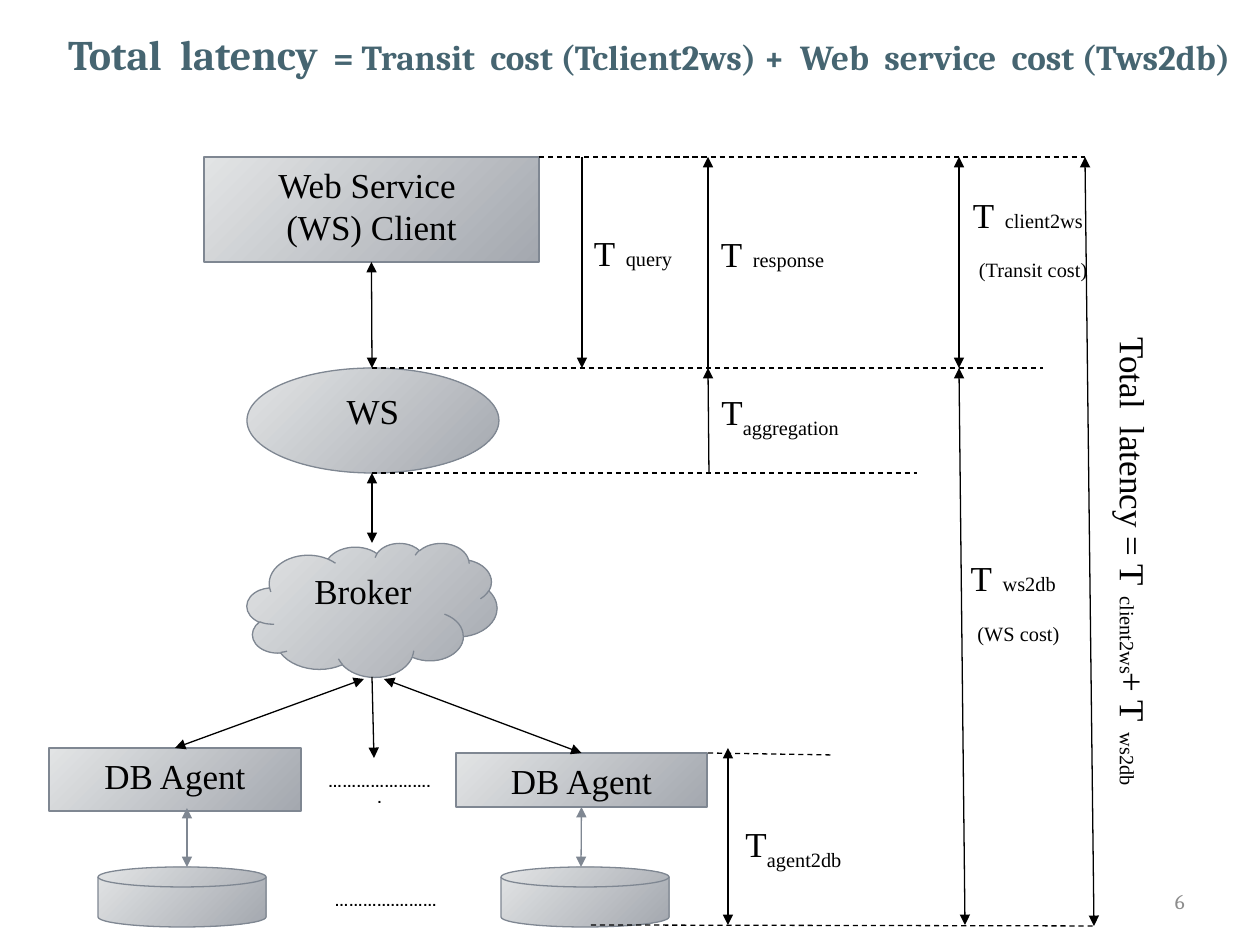
from pptx import Presentation
from pptx.dml.color import RGBColor
from pptx.enum.dml import MSO_LINE
from pptx.enum.shapes import MSO_CONNECTOR, MSO_SHAPE
from pptx.enum.text import MSO_ANCHOR, PP_ALIGN
from pptx.oxml.ns import qn
from pptx.util import Pt
from lxml.etree import SubElement

PX = 914400 / 126
SERIF = "Times New Roman"
COLORS = {"title": "466571", "number": "8C8C8C", "ink": "000000",
          "edge": "7F8792", "light": "E2E4E5", "dark": "A4A8AF"}

# Content: runs are (text, size, subscript)
TITLE = [[("Total  latency", 24, False),
          ("  = Transit  cost (Tclient2ws) +  Web  service  cost (Tws2db)", 20, False)]]

# name: (preset, box, lines)
NODES = {
    "client": (MSO_SHAPE.RECTANGLE, (204, 157, 335, 105), ["Web Service ", "(WS) Client"]),
    "ws": (MSO_SHAPE.OVAL, (247, 368, 252, 105), ["WS"]),
    "broker": (MSO_SHAPE.CLOUD, (247, 543, 250, 134), ["Broker"]),
    "agent 1": (MSO_SHAPE.RECTANGLE, (49, 748, 252, 63), ["DB Agent"]),
    "database 1": (MSO_SHAPE.FLOWCHART_MAGNETIC_DISK, (98, 867, 168, 60), []),
    "agent 2": (MSO_SHAPE.RECTANGLE, (456, 753, 251, 54), ["DB Agent"]),
    "database 2": (MSO_SHAPE.FLOWCHART_MAGNETIC_DISK, (501, 867, 168, 60), []),
}

# (from, to, arrowheads, colour, node and side joined at the start)
ARROWS = [
    ((372, 262), (372, 368), "both", "ink", ("client", 2)),
    ((372, 473), (372, 543), "both", "ink", None),
    ((175, 748), (364, 679), "both", "ink", ("agent 1", 0)),
    ((582, 753), (384, 679), "both", "ink", ("agent 2", 0)),
    ((372, 677), (374, 758), "end", "ink", None),
    ((187, 808), (187, 867), "both", "edge", None),
    ((581, 807), (581, 867), "both", "edge", ("agent 2", 2)),
    # Time spans
    ((582, 157), (582, 368), "end", "ink", None),
    ((708, 368), (708, 157), "end", "ink", None),
    ((709, 473), (708, 368), "end", "ink", None),
    ((959, 157), (959, 368), "both", "ink", None),
    ((959, 368), (965, 925), "both", "ink", None),
    ((728, 748), (728, 925), "both", "ink", None),
    ((1085, 157), (1094, 926), "both", "ink", None),
]
GUIDES = [((539, 157), (1085, 157)), ((372, 368), (1043, 368)), ((372, 473), (917, 473)),
          ((591, 925), (1094, 926)), ((708, 753), (833, 755))]

# (box, subscript, second line)
TURNED_LABELS = [
    ((587, 220, 87, 98), "query", None),
    ((741, 194, 67, 132), "response", None),
    ((960, 183, 129, 137), "client2ws", "(Transit cost)"),
    ((956, 549, 118, 121), "ws2db", "(WS cost)"),
]
FLAT_LABELS = [((709, 384, 155, 55), "aggregation", PP_ALIGN.LEFT),
               ((728, 816, 131, 55), "agent2db", PP_ALIGN.CENTER)]
TOTAL = [[("Total  latency = T", 20, False), ("client2ws", 20, True),
          (" + T", 20, False), ("ws2db", 20, True)]]
DOTS = [((286, 886, 200, 29), "………….………"), ((315, 767, 129, 29), "…………………..")]

prs = Presentation()
prs.slide_width, prs.slide_height = round(1260 * PX), round(945 * PX)
s = prs.slides.add_slide(prs.slide_layouts[6])


def emu(values):
    return [round(v * PX) for v in values]


def rgb(name):
    return RGBColor.from_string(COLORS[name])


def write(tf, paragraphs, font=SERIF, color="ink", bold=False, align=PP_ALIGN.CENTER):
    for i, runs in enumerate(paragraphs):
        p = tf.add_paragraph() if i else tf.paragraphs[0]
        p.alignment = align
        for text, size, subscript in runs:
            r = p.add_run()
            r.text = text
            r.font.name, r.font.size, r.font.bold = font, Pt(size), bold
            r.font.color.rgb = rgb(color)
            if subscript:
                r.font._element.set("baseline", "-30000")


def add_text(box, paragraphs, wrap=True, anchor=MSO_ANCHOR.TOP, vertical=False, **style):
    sp = s.shapes.add_textbox(*emu(box))
    tf = sp.text_frame
    tf.word_wrap, tf.vertical_anchor = wrap, anchor
    if vertical:
        tf._txBody.bodyPr.set("vert", "eaVert")
    write(tf, paragraphs, **style)
    return sp


def add_node(preset, box, lines):
    sp = s.shapes.add_shape(preset, *emu(box))
    sp.shadow.inherit = False
    sp.fill.gradient()
    sp.fill.gradient_angle = 315
    for stop, color, position in zip(sp.fill.gradient_stops, ("light", "dark"), (0, 1)):
        stop.color.rgb, stop.position = rgb(color), position
    sp.line.color.rgb, sp.line.width = rgb("edge"), Pt(0.75)
    sp.text_frame.vertical_anchor = MSO_ANCHOR.TOP
    write(sp.text_frame, [[(line, 20, False)] for line in lines])
    return sp


def add_line(start, end, heads=None, color="ink", dashed=False):
    line = s.shapes.add_connector(MSO_CONNECTOR.STRAIGHT, *emu(start + end))
    line.line.color.rgb, line.line.width = rgb(color), Pt(0.75)
    if dashed:
        line.line.dash_style = MSO_LINE.DASH
    ln = line.line._get_or_add_ln()
    if heads == "both":
        SubElement(ln, qn("a:headEnd"), type="triangle")
    if heads:
        SubElement(ln, qn("a:tailEnd"), type="triangle")
    SubElement(line._element.spPr, qn("a:effectLst"))
    return line


# Title and slide number
add_text((39, 0, 1221, 108), TITLE, anchor=MSO_ANCHOR.MIDDLE,
         font="Cambria", color="title", bold=True)
add_text((903, 876, 294, 50), [[("6", 12, False)]], anchor=MSO_ANCHOR.MIDDLE,
         font="Cambria", color="number", align=PP_ALIGN.RIGHT)

# Nodes, arrows and dashed guides
nodes = {name: add_node(*node) for name, node in NODES.items()}
for start, end, heads, color, joint in ARROWS:
    arrow = add_line(start, end, heads, color)
    if joint:
        arrow.begin_connect(nodes[joint[0]], joint[1])
for start, end in GUIDES:
    add_line(start, end, dashed=True)

# Latency labels
for box, subscript, note in TURNED_LABELS:
    paragraphs = [[("T", 20, False), (subscript, 20, True)]]
    if note:
        paragraphs.append([(note, 20, True)])
    add_text(box, paragraphs, vertical=True).rotation = 270
for box, subscript, align in FLAT_LABELS:
    add_text(box, [[("T", 20, False), (subscript, 20, True)]], wrap=False, align=align)
add_text((1092, 325, 69, 500), TOTAL, vertical=True)

# Dots between the agents and between the databases
for box, dots in DOTS:
    add_text(box, [[(dots, 8, False)]], font="Arial", bold=True)

prs.save("out.pptx")
